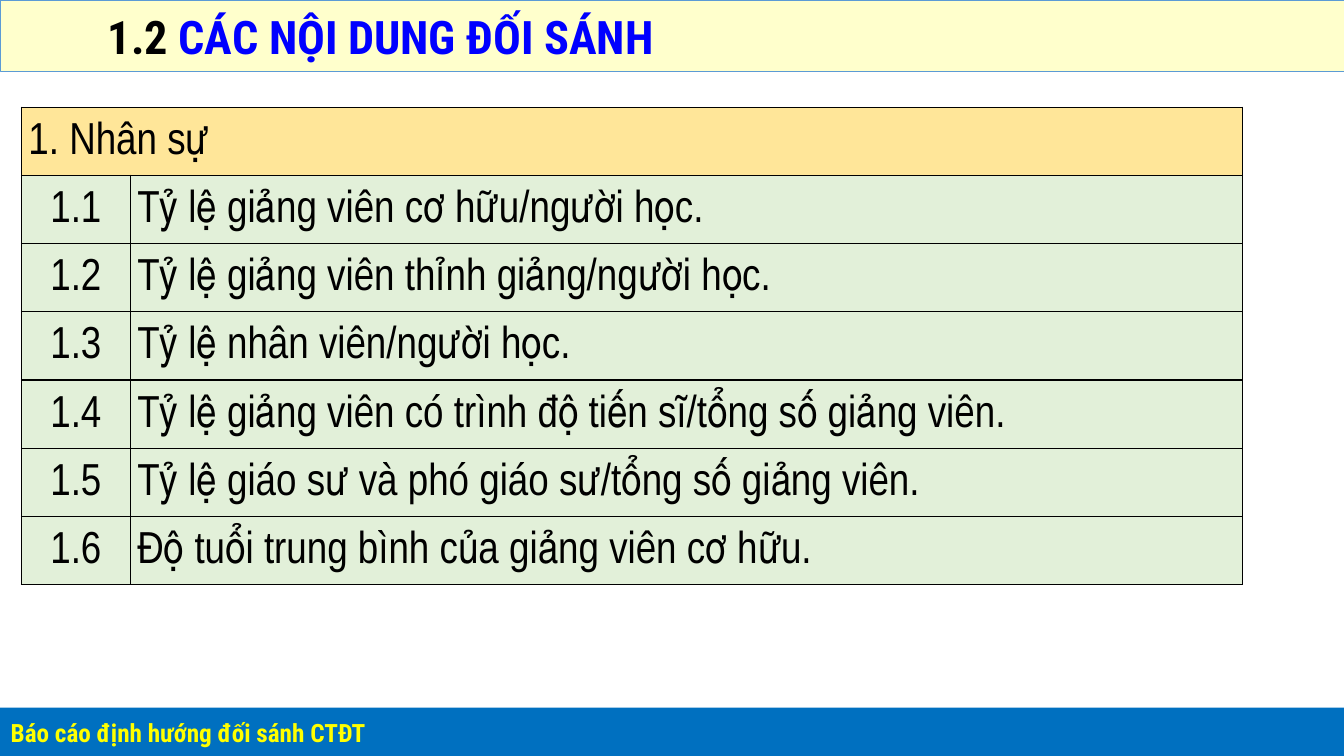
from dataclasses import dataclass

from lxml.etree import SubElement
from pptx import Presentation
from pptx.dml.color import RGBColor
from pptx.enum.shapes import MSO_SHAPE
from pptx.enum.text import MSO_ANCHOR, PP_ALIGN
from pptx.oxml.ns import qn
from pptx.util import Pt


@dataclass(frozen=True)
class Theme:
    """Colours, fonts and type sizes of the slide."""
    black: str = "000000"
    blue: str = "0000FF"
    yellow: str = "FFFF00"
    title_band: str = "FFFFCC"
    title_edge: str = "5B9BD5"
    footer_band: str = "0070C0"
    group_row: str = "FFE699"
    item_row: str = "E2F0D9"
    heading_font: str = "Roboto Condensed"
    table_font: str = "Arial Narrow"
    title_size: int = 33
    footer_size: int = 18
    table_size: int = 32


THEME = Theme()
GROUP = "1. Nhân sự"
CRITERIA = [
    "Tỷ lệ giảng viên cơ hữu/người học.",
    "Tỷ lệ giảng viên thỉnh giảng/người học.",
    "Tỷ lệ nhân viên/người học.",
    "Tỷ lệ giảng viên có trình độ tiến sĩ/tổng số giảng viên.",
    "Tỷ lệ giáo sư và phó giáo sư/tổng số giảng viên.",
    "Độ tuổi trung bình của giảng viên cơ hữu.",
]


def rgb(colour):
    """Turn a hex string into a colour."""
    return RGBColor.from_string(colour)


def set_font(font, name, size, colour=None, bold=False):
    """Set the typeface, size, weight and optional colour of a font."""
    font.name, font.size, font.bold = name, Pt(size), bold
    if colour:
        font.color.rgb = rgb(colour)


def add_band(slide, top, height, fill, edge=None):
    """Add a full-width rectangle."""
    band = slide.shapes.add_shape(MSO_SHAPE.RECTANGLE, 0, Pt(top), Pt(960), Pt(height))
    band.shadow.inherit = False
    band.fill.solid()
    band.fill.fore_color.rgb = rgb(fill)
    if edge:
        band.line.color.rgb = rgb(edge)
        band.line.width = Pt(0.5)
    else:
        band.line.fill.background()
    return band


def add_title(slide, number, heading):
    """Add the title band with a black number and a blue heading."""
    frame = add_band(slide, 0.5, 50.5, THEME.title_band, THEME.title_edge).text_frame
    frame.vertical_anchor = MSO_ANCHOR.MIDDLE
    frame.margin_left = Pt(77)
    frame.margin_top = frame.margin_bottom = Pt(5)
    line = frame.paragraphs[0]
    line.alignment = PP_ALIGN.LEFT
    set_font(line.font, THEME.heading_font, THEME.title_size, bold=True)
    for words, colour in ((number + " ", THEME.black), (heading, THEME.blue)):
        part = line.add_run()
        part.text = words
        part.font.color.rgb = rgb(colour)


def add_footer(slide, words):
    """Add the footer band and its caption."""
    add_band(slide, 505.5, 36.5, THEME.footer_band)
    caption = slide.shapes.add_textbox(Pt(0.5), Pt(502), Pt(960), Pt(40)).text_frame
    caption.word_wrap = True
    caption.vertical_anchor = MSO_ANCHOR.MIDDLE
    line = caption.paragraphs[0]
    line.text = words
    line.line_spacing = 1.1
    line.space_before, line.space_after = Pt(12), Pt(6)
    set_font(line.font, THEME.heading_font, THEME.footer_size, THEME.yellow, True)


def add_borders(cell):
    """Draw thin black borders on all sides of a cell."""
    properties = cell._tc.get_or_add_tcPr()
    for position, side in enumerate(("lnL", "lnR", "lnT", "lnB")):
        border = SubElement(properties, qn(f"a:{side}"), w=str(Pt(1)))
        properties.insert(position, border)
        fill = SubElement(border, qn("a:solidFill"))
        SubElement(fill, qn("a:srgbClr"), val=THEME.black)


def fill_cell(cell, words, fill, alignment=PP_ALIGN.LEFT):
    """Write and format one table cell."""
    cell.fill.solid()
    cell.fill.fore_color.rgb = rgb(fill)
    cell.vertical_anchor = MSO_ANCHOR.MIDDLE
    cell.margin_left = cell.margin_right = Pt(5)
    cell.margin_top = cell.margin_bottom = 0
    line = cell.text_frame.paragraphs[0]
    line.text = words
    line.alignment = alignment
    line.line_spacing = 1.07
    line.space_after = Pt(8)
    set_font(line.font, THEME.table_font, THEME.table_size, THEME.black)
    add_borders(cell)


def add_criteria(slide):
    """Add the table of numbered criteria under their group row."""
    rows, row_height = len(CRITERIA) + 1, 48.75
    table = slide.shapes.add_table(
        rows, 2, Pt(15.3), Pt(76.5), Pt(872), Pt(rows * row_height)).table
    table.first_row = table.horz_banding = False
    table.columns[0].width, table.columns[1].width = Pt(77.8), Pt(794.2)
    for row in table.rows:
        row.height = Pt(row_height)
    table.cell(0, 0).merge(table.cell(0, 1))
    fill_cell(table.cell(0, 0), GROUP, THEME.group_row)
    add_borders(table.cell(0, 1))
    for index, criterion in enumerate(CRITERIA, 1):
        fill_cell(table.cell(index, 0), f"1.{index}", THEME.item_row, PP_ALIGN.CENTER)
        fill_cell(table.cell(index, 1), criterion, THEME.item_row)


def main():
    """Build and save the slide."""
    deck = Presentation()
    deck.slide_width, deck.slide_height = Pt(960), Pt(540)
    slide = deck.slides.add_slide(deck.slide_layouts[6])
    add_title(slide, "1.2", "CÁC NỘI DUNG ĐỐI SÁNH")
    add_footer(slide, "Báo cáo định hướng đối sánh CTĐT")
    add_criteria(slide)
    deck.save("out.pptx")


if __name__ == "__main__":
    main()
